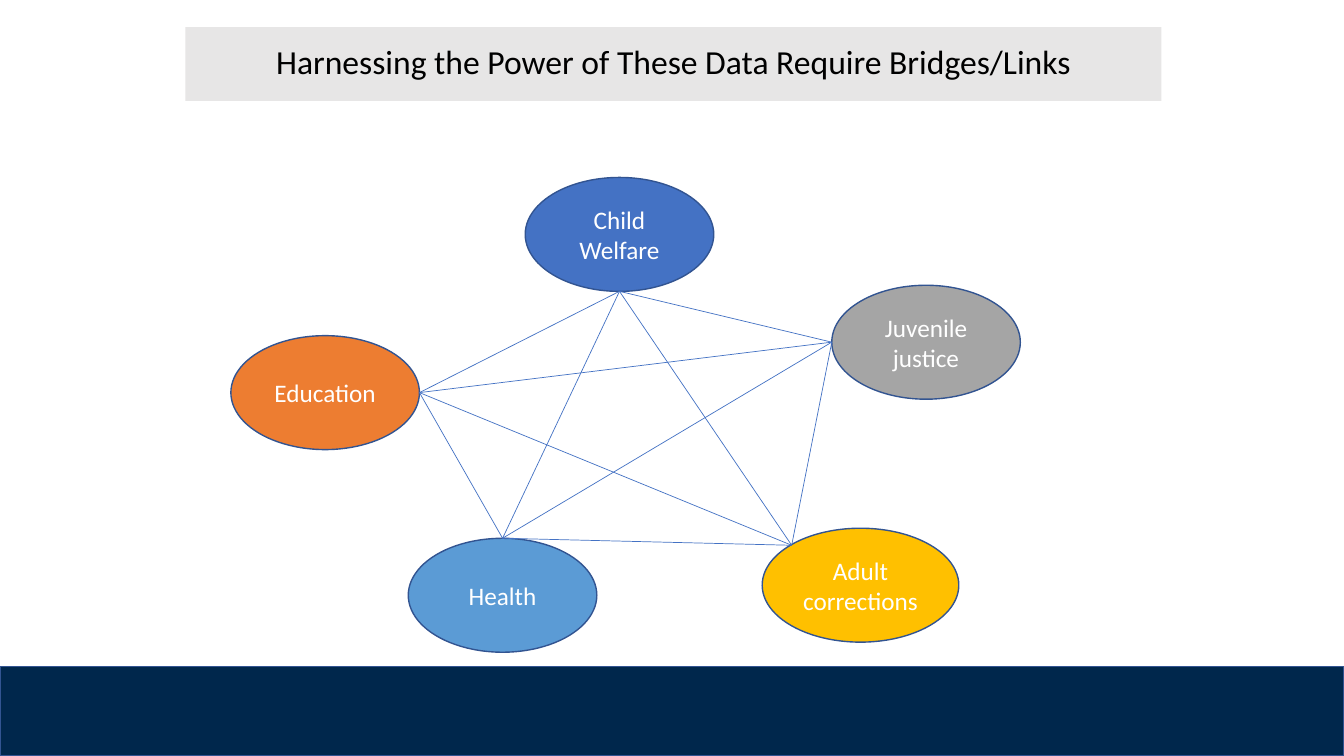
from itertools import combinations
from typing import NamedTuple

from pptx import Presentation
from pptx.dml.color import RGBColor
from pptx.enum.shapes import MSO_CONNECTOR as Link, MSO_SHAPE as Form
from pptx.enum.text import MSO_ANCHOR as Anchor, MSO_AUTO_SIZE as Fit, PP_ALIGN as Align
from pptx.oxml.ns import qn
from pptx.util import Inches, Pt

WHITE = RGBColor(0xFF, 0xFF, 0xFF)
BLACK = RGBColor(0x00, 0x00, 0x00)
BLUE = RGBColor(0x44, 0x72, 0xC4)
GRAY = RGBColor(0xA5, 0xA5, 0xA5)
ORANGE = RGBColor(0xED, 0x7D, 0x31)
SKY = RGBColor(0x5B, 0x9B, 0xD5)
GOLD = RGBColor(0xFF, 0xC0, 0x00)
NAVY = RGBColor(0x00, 0x27, 0x4C)
EDGE = RGBColor(0x32, 0x54, 0x91)
PALE = RGBColor(0xE7, 0xE6, 0xE6)

WIDE, HIGH = Inches(13.33), Inches(7.5)


class Box(NamedTuple):
    """Left, top, width and height as percent of the slide."""
    x: float
    y: float
    w: float
    h: float

    def point(self, across: float = 0, down: float = 0) -> tuple[int, int]:
        """Place on the slide of a point given as shares of the box."""
        return (round(WIDE * (self.x + across * self.w) / 100),
                round(HIGH * (self.y + down * self.h) / 100))

    def size(self) -> tuple[int, int]:
        return round(WIDE * self.w / 100), round(HIGH * self.h / 100)


class Node(NamedTuple):
    """A data source; port is where its links meet, as shares of its box."""
    name: str
    fill: RGBColor
    box: Box
    port: tuple[float, float]


NODES = [
    Node("Education", ORANGE, Box(17.18, 44.4, 14.03, 15.07), (1, 0.5)),
    Node("Child Welfare", BLUE, Box(39.08, 23.47, 14.03, 15.07), (0.5, 1)),
    Node("Juvenile justice", GRAY, Box(61.89, 37.73, 14.03, 15.07), (0, 0.5)),
    Node("Health", SKY, Box(30.38, 71.2, 14.03, 15.07), (0.5, 0)),
    Node("Adult corrections", GOLD, Box(56.71, 69.87, 14.63, 15.07), (0.15, 0.15)),
]
TITLE = Box(13.8, 3.6, 72.62, 9.73)
BAND = Box(0, 88.13, 100, 11.87)


def write(shape, text: str, *, size: float, color: RGBColor, space: float = 1) -> None:
    frame = shape.text_frame
    frame.text = text
    frame.word_wrap = True
    frame.auto_size = Fit.NONE
    frame.vertical_anchor = Anchor.MIDDLE
    para = frame.paragraphs[0]
    para.alignment = Align.CENTER
    para.line_spacing = space
    font = para.runs[0].font
    font.name, font.size, font.color.rgb = "Calibri", Pt(size), color


def paint(shape, fill: RGBColor) -> None:
    shape.fill.solid()
    shape.fill.fore_color.rgb = fill


def draw(slide, form: Form, box: Box, fill: RGBColor):
    shape = slide.shapes.add_shape(form, *box.point(), *box.size())
    shape.shadow.inherit = False
    paint(shape, fill)
    shape.line.color.rgb = EDGE
    shape.line.width = Pt(1)
    return shape


def join(slide, start: Node, end: Node) -> None:
    link = slide.shapes.add_connector(
        Link.STRAIGHT, *start.box.point(*start.port), *end.box.point(*end.port))
    link.line.color.rgb = BLUE
    link.line.width = Pt(0.5)
    props = link._element.spPr
    props.append(props.makeelement(qn("a:effectLst"), {}))


def main() -> None:
    deck = Presentation()
    deck.slide_width, deck.slide_height = WIDE, HIGH
    slide = deck.slides.add_slide(deck.slide_layouts.get_by_name("Title Only"))

    title = slide.shapes.title
    title.left, title.top = TITLE.point()
    title.width, title.height = TITLE.size()
    paint(title, PALE)
    write(title, "Harnessing the Power of These Data Require Bridges/Links",
          size=24, color=BLACK, space=0.9)

    for node in NODES:
        oval = draw(slide, Form.OVAL, node.box, node.fill)
        write(oval, node.name, size=18, color=WHITE)
    for start, end in combinations(NODES, 2):
        join(slide, start, end)
    draw(slide, Form.RECTANGLE, BAND, NAVY)

    deck.save("out.pptx")


if __name__ == "__main__":
    main()
